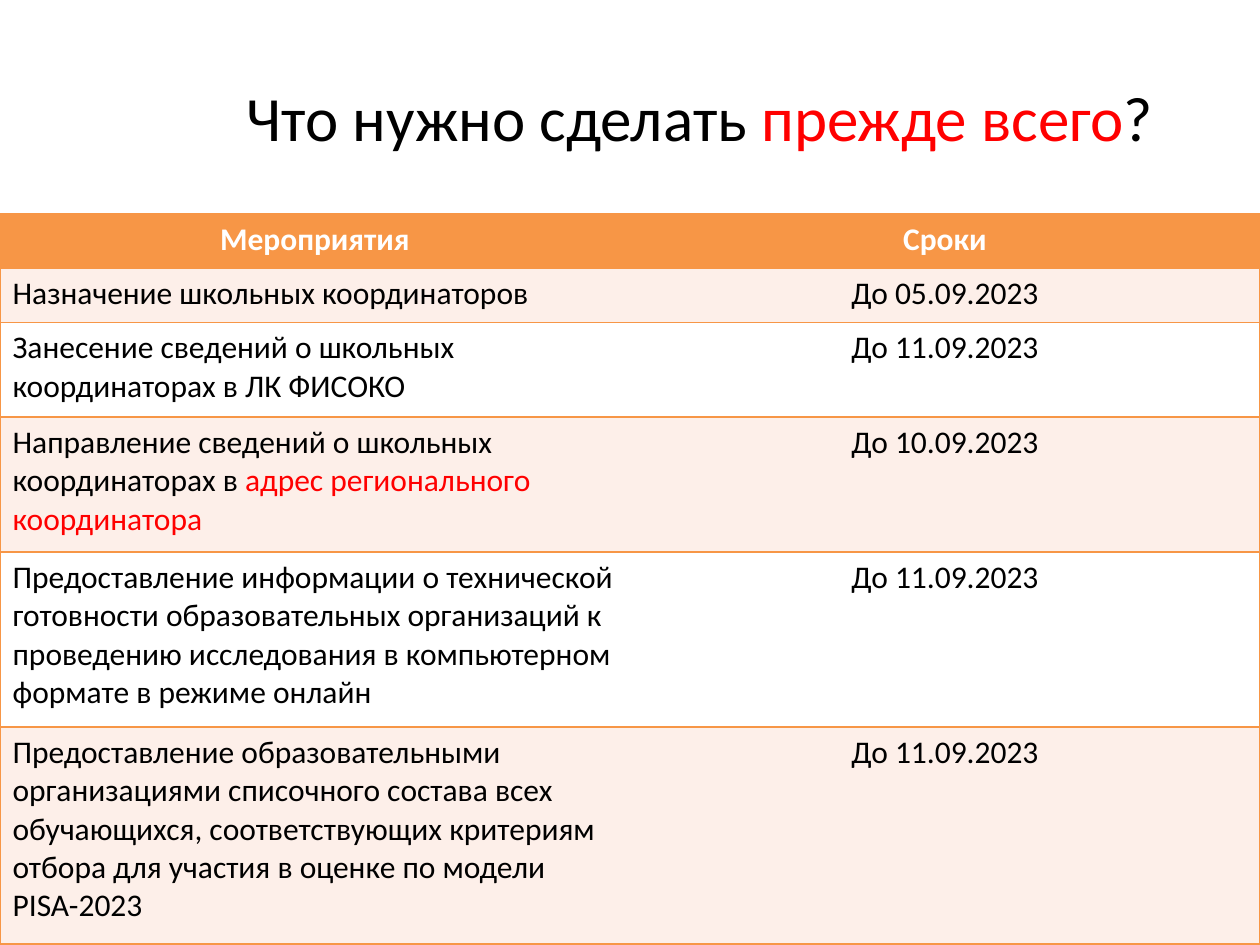
from dataclasses import dataclass

from lxml import etree
from pptx import Presentation
from pptx.dml.color import RGBColor
from pptx.enum.text import MSO_ANCHOR, PP_ALIGN
from pptx.oxml.ns import qn
from pptx.util import Pt

LEFT, CENTER = PP_ALIGN.LEFT, PP_ALIGN.CENTER
MIDDLE = MSO_ANCHOR.MIDDLE
TITLE_ONLY = 5

BLACK = RGBColor(0, 0, 0)
WHITE = RGBColor(255, 255, 255)
RED = RGBColor(255, 0, 0)
ORANGE = RGBColor(0xF7, 0x96, 0x46)
PEACH = RGBColor(0xFD, 0xEF, 0xE9)


@dataclass
class Run:
    text: str
    color: RGBColor = BLACK


@dataclass
class Row:
    height: float
    task: list[Run]
    due: Run


TITLE = [Run("Что нужно сделать "), Run("прежде всего", RED), Run("?")]
ROWS = [
    Row(31, [Run("Мероприятия", WHITE)], Run("Сроки", WHITE)),
    Row(31, [Run("Назначение школьных координаторов")], Run("До 05.09.2023")),
    Row(54, [Run("Занесение сведений о школьных координаторах в ЛК ФИСОКО")],
        Run("До 11.09.2023")),
    Row(77, [Run("Направление сведений о школьных координаторах в "),
             Run("адрес регионального координатора", RED)],
        Run("До 10.09.2023")),
    Row(100, [Run("Предоставление информации о технической готовности "
                  "образовательных организаций к проведению исследования "
                  "в компьютерном формате в режиме онлайн")],
        Run("До 11.09.2023")),
    Row(124, [Run("Предоставление образовательными организациями списочного "
                  "состава всех обучающихся, соответствующих критериям отбора "
                  "для участия в оценке по модели PISA-2023")],
        Run("До 11.09.2023")),
]


def write(frame, runs: list[Run], size: float, align, bold: bool = False) -> None:
    """Fill the first paragraph with coloured runs."""
    para = frame.paragraphs[0]
    para.alignment = align
    form = {"name": "Calibri", "size": Pt(size), "bold": bold}
    for part in runs:
        run = para.add_run()
        run.text = part.text
        for key, value in form.items():
            setattr(run.font, key, value)
        run.font.color.rgb = part.color


def edge(cell, shown: str) -> None:
    """Draw the named sides (L, R, T, B) in orange and hide the others."""
    props = cell._tc.get_or_add_tcPr()
    for side in "LRTB":
        line = etree.SubElement(props, qn(f"a:ln{side}"), w=str(Pt(1)))
        if side in shown:
            fill = etree.SubElement(line, qn("a:solidFill"))
            etree.SubElement(fill, qn("a:srgbClr"), val=str(ORANGE))
        else:
            etree.SubElement(line, qn("a:noFill"))


def paint(cell, color: RGBColor, sides: str) -> None:
    edge(cell, sides)
    cell.fill.solid()
    cell.fill.fore_color.rgb = color


def main() -> None:
    deck = Presentation()
    deck.slide_width, deck.slide_height = Pt(720), Pt(540)
    slide = deck.slides.add_slide(deck.slide_layouts[TITLE_ONLY])

    # Title
    title = slide.shapes.title
    place = {"left": 116, "top": 21.6, "width": 568, "height": 90}
    for key, value in place.items():
        setattr(title, key, Pt(value))
    title.text_frame.vertical_anchor = MIDDLE
    write(title.text_frame, TITLE, 36, CENTER)

    # Table of tasks and due dates
    total = sum(row.height for row in ROWS)
    table = slide.shapes.add_table(
        len(ROWS), 2, Pt(0), Pt(122.4), Pt(720), Pt(total)).table
    for i, row in enumerate(ROWS):
        head = i == 0
        table.rows[i].height = Pt(row.height)
        color = ORANGE if head else PEACH if i % 2 else WHITE
        task, due = table.cell(i, 0), table.cell(i, 1)
        paint(task, color, "LTB")
        paint(due, color, "RTB")
        write(task.text_frame, row.task, 18, CENTER if head else LEFT, head)
        write(due.text_frame, [row.due], 18, CENTER, head)

    deck.save("out.pptx")


if __name__ == "__main__":
    main()
